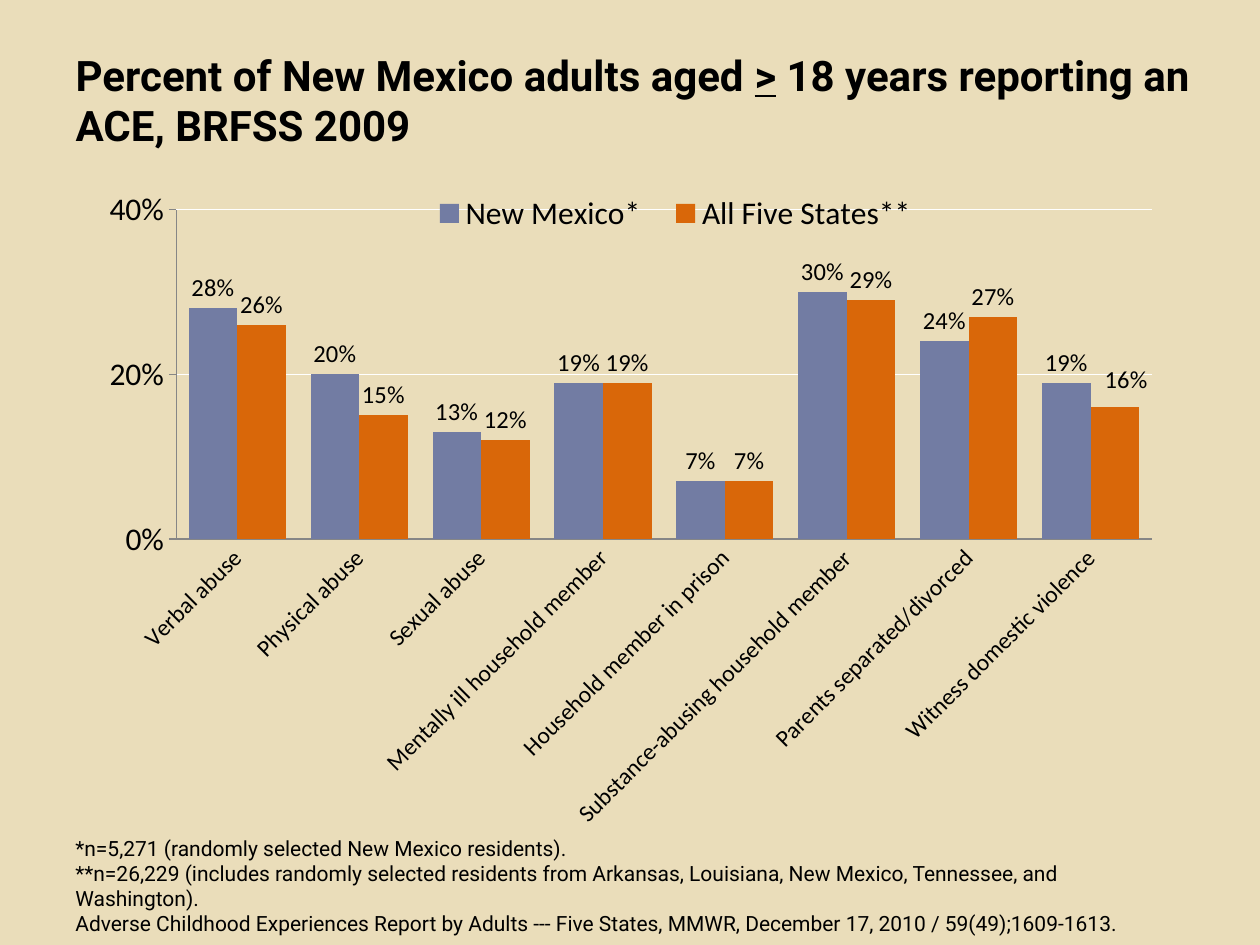
from dataclasses import dataclass

from lxml.etree import SubElement
from pptx import Presentation
from pptx.chart.data import CategoryChartData
from pptx.dml.color import RGBColor
from pptx.enum.chart import XL_CHART_TYPE as ChartType
from pptx.enum.chart import XL_LABEL_POSITION as LabelPos
from pptx.enum.chart import XL_LEGEND_POSITION as LegendPos
from pptx.enum.chart import XL_TICK_MARK as TickMark
from pptx.enum.text import MSO_ANCHOR as Anchor
from pptx.enum.text import PP_ALIGN as Align
from pptx.oxml.ns import qn
from pptx.util import Emu, Pt

SAND = RGBColor(0xEA, 0xDD, 0xBA)
BLACK = RGBColor(0, 0, 0)
WHITE = RGBColor(0xFF, 0xFF, 0xFF)
AXIS_GREY = RGBColor(0x86, 0x86, 0x86)
SLATE = RGBColor(0x72, 0x7C, 0xA3)
ORANGE = RGBColor(0xD9, 0x67, 0x09)
PX = 914400 / 126  # EMU per pixel


@dataclass
class Box:
    left: int
    top: int
    width: int
    height: int

    def emu(self) -> list[Emu]:
        return [Emu(round(n * PX)) for n in (self.left, self.top, self.width, self.height)]


@dataclass
class Group:
    name: str
    percents: list[int]
    color: RGBColor


CATEGORIES = [
    "Verbal abuse", "Physical abuse", "Sexual abuse",
    "Mentally ill household member", "Household member in prison",
    "Substance-abusing household member", "Parents separated/divorced",
    "Witness domestic violence",
]
GROUPS = [
    Group("New Mexico*", [28, 20, 13, 19, 7, 30, 24, 19], SLATE),
    Group("All Five States**", [26, 15, 12, 19, 7, 29, 27, 16], ORANGE),
]
FOOTNOTES = [
    "*n=5,271 (randomly selected New Mexico residents).",
    "**n=26,229 (includes randomly selected residents from Arkansas, Louisiana, "
    "New Mexico, Tennessee, and Washington).",
    "Adverse Childhood Experiences Report by Adults --- Five States, MMWR, "
    "December 17, 2010 / 59(49);1609-1613.",
]


def set_font(font, size: float, name: str = "Calibri", bold: bool = False) -> None:
    font.name, font.size, font.bold = name, Pt(size), bold
    font.color.rgb = BLACK


def add_layout(parent, **settings):
    """Append a manual chart layout; the caller may move it into place."""
    layout = SubElement(parent, qn("c:layout"))
    manual = SubElement(layout, qn("c:manualLayout"))
    for tag, value in settings.items():
        SubElement(manual, qn(f"c:{tag}")).set("val", str(value))
    return layout


def place_part(element, position: int, x: float, y: float, w: float, h: float, **target) -> None:
    for old in element.findall(qn("c:layout")):
        element.remove(old)
    layout = add_layout(element, **target, xMode="edge", yMode="edge", x=x, y=y, w=w, h=h)
    element.insert(position, layout)


def style_series(series, group: Group) -> None:
    series.format.fill.solid()
    series.format.fill.fore_color.rgb = group.color
    series.invert_if_negative = False
    labels = series.data_labels
    labels.show_value = True
    labels.number_format, labels.number_format_is_linked = "0%", False
    labels.position = LabelPos.OUTSIDE_END
    set_font(labels.font, 14)


def style_axes(chart) -> None:
    for axis, size, tick in ((chart.category_axis, 13.5, TickMark.NONE),
                             (chart.value_axis, 18, TickMark.OUTSIDE)):
        set_font(axis.tick_labels.font, size)
        axis.major_tick_mark, axis.minor_tick_mark = tick, TickMark.NONE
        axis.format.line.color.rgb = AXIS_GREY
        axis.format.line.width = Pt(0.75)
    chart.category_axis._element.txPr.bodyPr.set("rot", "-2700000")
    values = chart.value_axis
    values.minimum_scale, values.maximum_scale, values.major_unit = 0, 0.4, 0.2
    values.tick_labels.number_format = "0%"
    values.tick_labels.number_format_is_linked = False
    values.major_gridlines.format.line.color.rgb = WHITE
    values.major_gridlines.format.line.width = Pt(0.75)


def add_ace_chart(slide, box: Box) -> None:
    data = CategoryChartData(number_format="0%")
    data.categories = CATEGORIES
    for group in GROUPS:
        data.add_series(group.name, [p / 100 for p in group.percents])
    chart = slide.shapes.add_chart(ChartType.COLUMN_CLUSTERED, *box.emu(), data).chart
    set_font(chart.font, 18)
    chart.has_title = False
    bars = chart.plots[0]
    bars.gap_width, bars.overlap, bars.vary_by_categories = 51, 0, False
    for series, group in zip(bars.series, GROUPS):
        style_series(series, group)
    style_axes(chart)

    # The last label sits slightly right of its bar
    last_label = bars.series[1].points[len(CATEGORIES) - 1].data_label
    set_font(last_label.font, 14)
    last_label.position = LabelPos.OUTSIDE_END
    label_xml = bars.series[1].data_labels._element.find(qn("c:dLbl"))
    label_xml.insert(1, add_layout(label_xml, x=0.01, y=-0.01))

    # Plot area and the legend across its top
    chart.has_legend = True
    chart.legend.position = LegendPos.TOP
    chart.legend.include_in_layout = False
    set_font(chart.legend.font, 18)
    place_part(chart.legend._element, 1, 0.31, 0.02, 0.46, 0.05)
    plot_area = chart._chartSpace.chart.plotArea
    place_part(plot_area, 0, 0.1, 0.04, 0.86, 0.43, layoutTarget="inner")


def add_title(slide, box: Box) -> None:
    title = slide.shapes.title
    title.left, title.top, title.width, title.height = box.emu()
    frame = title.text_frame
    frame.vertical_anchor = Anchor.MIDDLE
    heading = frame.paragraphs[0]
    heading.alignment = Align.LEFT
    for text, underlined in (("Percent of New Mexico adults aged ", False), (">", True),
                             (" 18 years reporting an ACE, BRFSS 2009", False)):
        run = heading.add_run()
        run.text = text
        set_font(run.font, 24, "Roboto", bold=True)
        run.font.underline = underlined


def add_footnotes(slide, box: Box) -> None:
    frame = slide.shapes.add_textbox(*box.emu()).text_frame
    frame.word_wrap = True
    frame.text = "\n".join(FOOTNOTES)
    for note in frame.paragraphs:
        set_font(note.runs[0].font, 12, "Roboto")


def main() -> None:
    deck = Presentation()
    _, _, deck.slide_width, deck.slide_height = Box(0, 0, 1260, 945).emu()
    slide = deck.slides.add_slide(deck.slide_layouts[5])
    slide.background.fill.solid()
    slide.background.fill.fore_color.rgb = SAND
    add_title(slide, Box(63, 21, 1164, 158))
    add_ace_chart(slide, Box(63, 179, 1134, 766))
    add_footnotes(slide, Box(63, 829, 1124, 115))
    deck.save("out.pptx")


if __name__ == "__main__":
    main()
